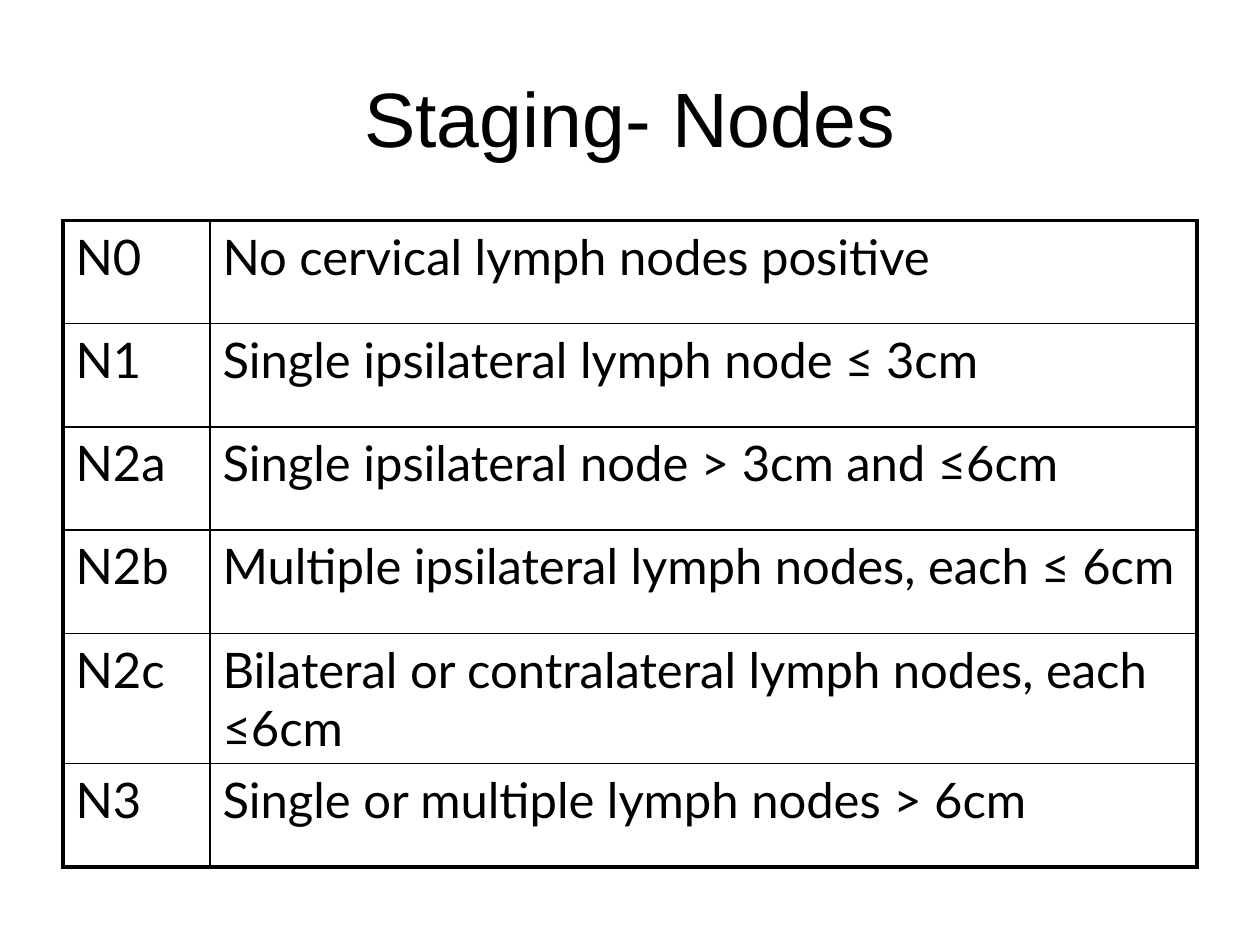
from lxml.etree import SubElement
from pptx import Presentation
from pptx.dml.color import RGBColor
from pptx.enum.text import MSO_ANCHOR, PP_ALIGN
from pptx.oxml.ns import qn
from pptx.util import Pt

BLACK = RGBColor(0, 0, 0)
TITLE_ONLY = 5
THICK, THIN = 2.25, 1

STAGES = [
    ("N0", "No cervical lymph nodes positive"),
    ("N1", "Single ipsilateral lymph node ≤ 3cm"),
    ("N2a", "Single ipsilateral node > 3cm and ≤6cm"),
    ("N2b", "Multiple ipsilateral lymph nodes, each ≤ 6cm"),
    ("N2c", "Bilateral or contralateral lymph nodes, each ≤6cm"),
    ("N3", "Single or multiple lymph nodes > 6cm"),
]


class SlideBuilder:
    title_style = {"name": "Arial", "size": Pt(44), "bold": False}
    cell_style = {"name": "Lato", "size": Pt(28), "bold": False}

    def __init__(self, slide):
        self.slide = slide

    def add_text(self, frame, text, style, align):
        paragraph = frame.paragraphs[0]
        paragraph.alignment = align
        run = paragraph.add_run()
        run.text = text
        for attribute, value in style.items():
            setattr(run.font, attribute, value)
        run.font.color.rgb = BLACK

    def title(self, text, left, top, width, height):
        heading = self.slide.shapes.title
        box = {"left": left, "top": top, "width": width, "height": height}
        for attribute, value in box.items():
            setattr(heading, attribute, Pt(value))
        heading.text_frame.vertical_anchor = MSO_ANCHOR.MIDDLE
        self.add_text(heading.text_frame, text, self.title_style, PP_ALIGN.CENTER)

    def borders(self, cell, widths):
        """Draw the cell's edges; widths maps L, R, T and B to points."""
        properties = cell._tc.get_or_add_tcPr()
        for side, width in widths.items():
            line = SubElement(properties, qn(f"a:ln{side}"), w=str(Pt(width)))
            fill = SubElement(line, qn("a:solidFill"))
            SubElement(fill, qn("a:srgbClr"), val=str(BLACK))

    def table(self, rows, left, top, column_widths, row_height):
        """Add a table with a thick outline and thin inner rules."""
        last_row, last_column = len(rows) - 1, len(column_widths) - 1
        grid = self.slide.shapes.add_table(
            len(rows), len(column_widths), Pt(left), Pt(top),
            Pt(sum(column_widths)), Pt(row_height * len(rows))).table
        grid.first_row = grid.horz_banding = False
        for column, width in zip(grid.columns, column_widths):
            column.width = Pt(width)
        for r, row in enumerate(rows):
            for c, text in enumerate(row):
                cell = grid.cell(r, c)
                self.add_text(cell.text_frame, text, self.cell_style, PP_ALIGN.LEFT)
                outer = {"L": c == 0, "R": c == last_column,
                         "T": r == 0, "B": r == last_row}
                self.borders(cell, {side: THICK if edge else THIN
                                    for side, edge in outer.items()})
                cell.fill.background()


def main():
    deck = Presentation()
    deck.slide_width, deck.slide_height = Pt(720), Pt(540)
    builder = SlideBuilder(deck.slides.add_slide(deck.slide_layouts[TITLE_ONLY]))
    builder.title("Staging- Nodes", 36, 21.6, 648, 90)
    builder.table(STAGES, 36, 126, column_widths=(84, 564), row_height=59)
    deck.save("out.pptx")


if __name__ == "__main__":
    main()
